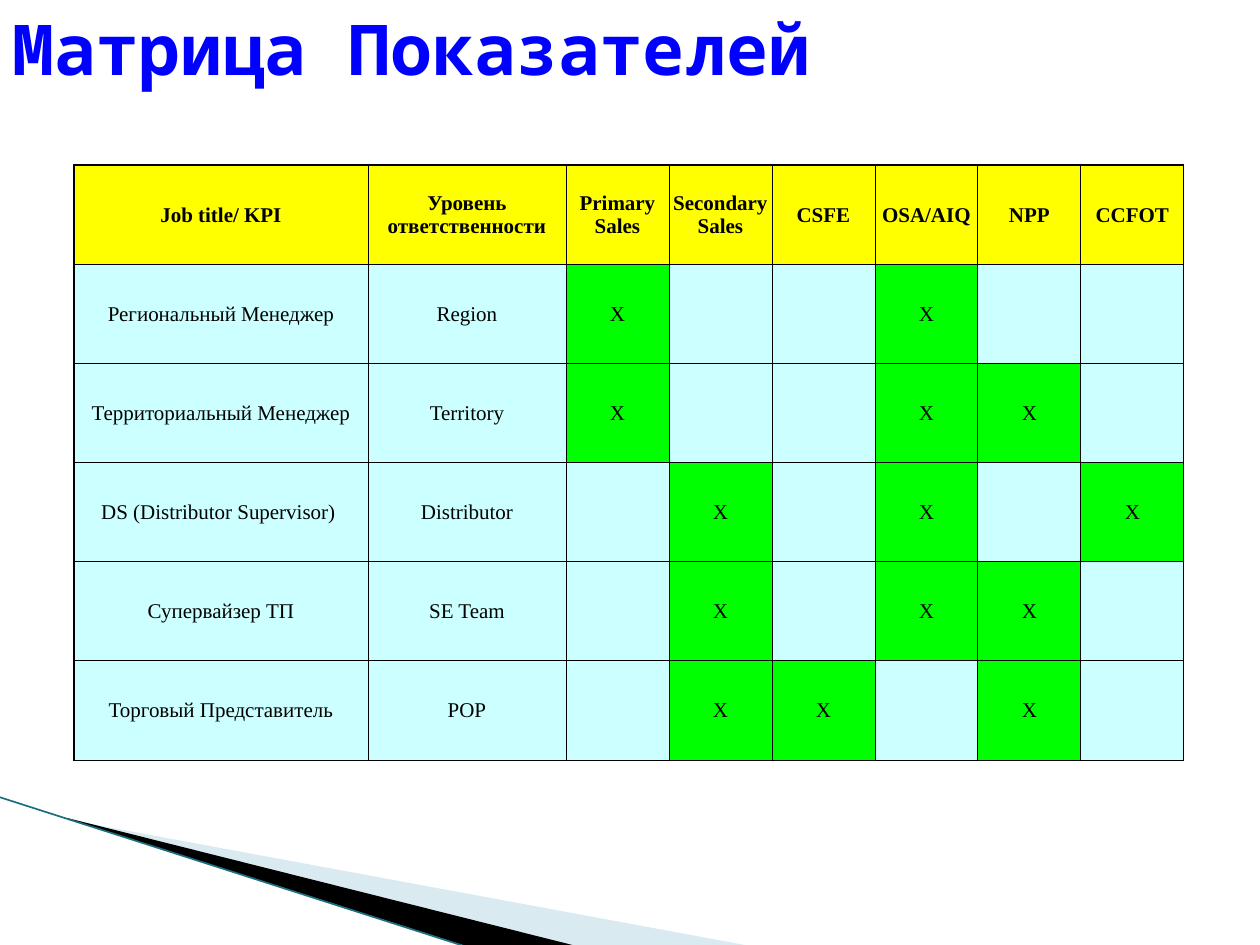
from lxml.etree import SubElement
from pptx import Presentation
from pptx.dml.color import RGBColor
from pptx.enum.shapes import MSO_CONNECTOR
from pptx.enum.text import MSO_ANCHOR, PP_ALIGN
from pptx.oxml.ns import qn
from pptx.util import Emu, Pt

THEME = {
    "title": "0000FF", "text": "000000", "border": "000000",
    "header": "FFFF00", "body": "CCFFFF", "mark": "00FF00",
    "pale_wedge": "A0CBDC", "dark_wedge": "000000", "edge": "1B6F80",
    "title_font": "Noto Sans Mono", "table_font": "Times New Roman",
    "title_size": 40, "table_size": 12,
}
PX = 914400 / 126


def px(count):
    return Emu(round(count * PX))


def add_run(para, text, font, size, color, bold):
    span = para.add_run()
    span.text = text
    span.font.name = THEME[font]
    span.font.size = Pt(THEME[size])
    span.font.bold = bold
    span.font.color.rgb = RGBColor.from_string(THEME[color])


deck = Presentation()
deck.slide_width, deck.slide_height = px(1260), px(945)
page = deck.slides.add_slide(deck.slide_layouts[6])

# Corner wedges
wedges = [
    ("pale_wedge", 40, [(69, 820), (750, 946), (575, 946), (69, 819)]),
    ("dark_wedge", 100, [(67, 818), (576, 946), (469, 947), (68, 819)]),
]
for color, opacity, points in wedges:
    builder = page.shapes.build_freeform(*points[0], scale=PX)
    builder.add_line_segments(points[1:], close=True)
    wedge = builder.convert_to_shape()
    wedge.shadow.inherit = False
    wedge.fill.solid()
    wedge.fill.fore_color.rgb = RGBColor.from_string(THEME[color])
    wedge.line.fill.background()
    if opacity < 100:
        tint = wedge.fill._xPr.find(qn("a:solidFill"))[0]
        SubElement(tint, qn("a:alpha"), val=str(opacity * 1000))

# Wedge edge
edge = page.shapes.add_connector(MSO_CONNECTOR.STRAIGHT, px(-1), px(797), px(467), px(947))
edge.line.color.rgb = RGBColor.from_string(THEME["edge"])
edge.line.width = Pt(0.95)
SubElement(edge._element.spPr, qn("a:effectLst"))

# Title
box = page.shapes.add_textbox(px(0), px(0), px(1134), px(95))
box.text_frame.word_wrap = True
box.text_frame.vertical_anchor = MSO_ANCHOR.MIDDLE
add_run(box.text_frame.paragraphs[0], "Матрица Показателей",
        "title_font", "title_size", "title", True)

# Responsibility matrix: each role lists the indicators it answers for
indicators = ["Primary Sales", "Secondary Sales", "CSFE", "OSA/AIQ", "NPP", "CCFOT"]
roles = [
    ("Региональный Менеджер", "Region", {"Primary Sales", "OSA/AIQ"}),
    ("Территориальный Менеджер", "Territory", {"Primary Sales", "OSA/AIQ", "NPP"}),
    ("DS (Distributor Supervisor) ", "Distributor", {"Secondary Sales", "OSA/AIQ", "CCFOT"}),
    ("Супервайзер ТП", "SE Team", {"Secondary Sales", "OSA/AIQ", "NPP"}),
    ("Торговый Представитель", "POP", {"Secondary Sales", "CSFE", "NPP"}),
]
rows = [["Job title/ KPI", "Уровень ответственности"] + indicators]
for role, level, marked in roles:
    rows.append([role, level] + ["X" if name in marked else "" for name in indicators])

widths = [294, 198] + [103] * len(indicators)
table = page.shapes.add_table(len(rows), len(widths), px(74), px(165),
                              px(sum(widths)), px(595)).table
for column, width in zip(table.columns, widths):
    column.width = px(width)

for row_index, texts in enumerate(rows):
    for column_index, text in enumerate(texts):
        cell = table.cell(row_index, column_index)
        cell.vertical_anchor = MSO_ANCHOR.MIDDLE
        cell.margin_left = cell.margin_right = cell.margin_top = px(1)
        cell.margin_bottom = 0

        # Borders, heavier on the left and top edges of the table
        properties = cell._tc.get_or_add_tcPr()
        weights = {"lnL": 0.5 if column_index else 1, "lnR": 0.5,
                   "lnT": 0.5 if row_index else 1, "lnB": 0.5}
        for side, weight in weights.items():
            border = SubElement(properties, qn("a:" + side), w=str(Pt(weight)))
            paint = SubElement(border, qn("a:solidFill"))
            SubElement(paint, qn("a:srgbClr"), val=THEME["border"])

        # Fill and text
        fill = "header" if row_index == 0 else "mark" if text == "X" else "body"
        cell.fill.solid()
        cell.fill.fore_color.rgb = RGBColor.from_string(THEME[fill])
        para = cell.text_frame.paragraphs[0]
        para.alignment = PP_ALIGN.CENTER
        if text:
            add_run(para, text, "table_font", "table_size", "text", row_index == 0)

deck.save("out.pptx")
